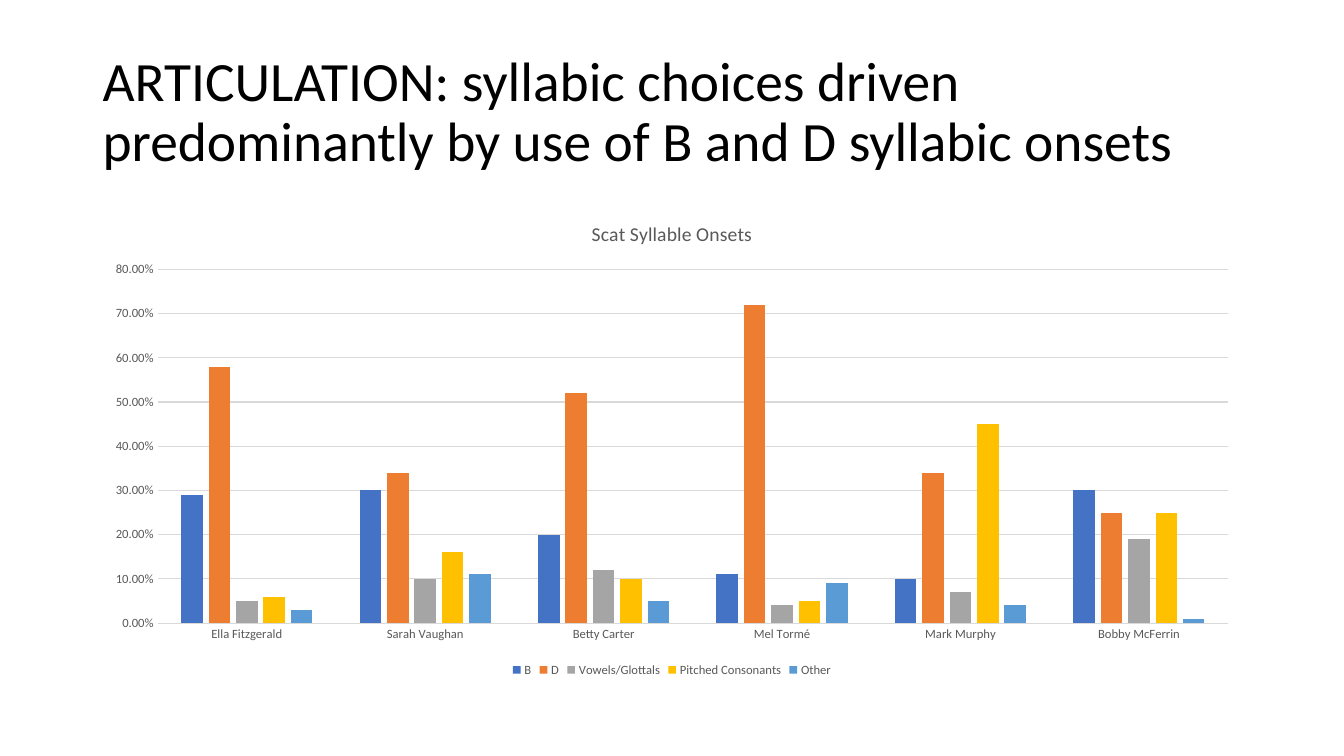
import pptx
import pptx.chart.data
import pptx.dml.color
import pptx.enum.chart
import pptx.enum.text
import pptx.util

COLUMNS, ROWS = 29, 150

SINGERS = ["Ella Fitzgerald", "Sarah Vaughan", "Betty Carter",
           "Mel Tormé", "Mark Murphy", "Bobby McFerrin"]
ONSETS = [
    ("B", "4472C4", (0.29, 0.3, 0.2, 0.11, 0.1, 0.3)),
    ("D", "ED7D31", (0.58, 0.34, 0.52, 0.72, 0.34, 0.25)),
    ("Vowels/Glottals", "A5A5A5", (0.05, 0.1, 0.12, 0.04, 0.07, 0.19)),
    ("Pitched Consonants", "FFC000", (0.06, 0.16, 0.1, 0.05, 0.45, 0.25)),
    ("Other", "5B9BD5", (0.03, 0.11, 0.05, 0.09, 0.04, 0.01)),
]


def color(value):
    return pptx.dml.color.RGBColor.from_string(value)


class SlideBuilder:
    font_name = "Calibri"
    title_color = "000000"
    label_color = "595959"
    line_color = "D9D9D9"

    def __init__(self, presentation):
        self.slide = presentation.slides.add_slide(presentation.slide_layouts[6])
        self.column = presentation.slide_width / COLUMNS
        self.row = presentation.slide_height / ROWS

    def place(self, left, top, width, height):
        return (round(left * self.column), round(top * self.row),
                round(width * self.column), round(height * self.row))

    def style_font(self, font, size, value):
        font.name = self.font_name
        font.size = pptx.util.Pt(size)
        font.bold = False
        font.color.rgb = color(value)

    def style_line(self, line):
        line.color.rgb = color(self.line_color)
        line.width = pptx.util.Pt(0.75)

    def title(self, text, *cells):
        frame = self.slide.shapes.add_textbox(*self.place(*cells)).text_frame
        frame.word_wrap = True
        frame.vertical_anchor = pptx.enum.text.MSO_ANCHOR.MIDDLE
        paragraph = frame.paragraphs[0]
        paragraph.text = text
        paragraph.line_spacing = 0.9
        self.style_font(paragraph.font, 39.6, self.title_color)

    def column_chart(self, heading, categories, series_rows, *cells):
        data = pptx.chart.data.CategoryChartData(number_format="0%")
        data.categories = categories
        for name, fill, values in series_rows:
            data.add_series(name, values)
        chart = self.slide.shapes.add_chart(
            pptx.enum.chart.XL_CHART_TYPE.COLUMN_CLUSTERED,
            *self.place(*cells), data).chart
        self.style_font(chart.font, 10, self.title_color)

        chart.has_title = True
        paragraph = chart.chart_title.text_frame.paragraphs[0]
        paragraph.text = heading
        self.style_font(paragraph.font, 14, self.label_color)
        chart.chart_title.include_in_layout = False

        chart.has_legend = True
        chart.legend.position = pptx.enum.chart.XL_LEGEND_POSITION.BOTTOM
        chart.legend.include_in_layout = False
        self.style_font(chart.legend.font, 9, self.label_color)

        plot = chart.plots[0]
        plot.gap_width = 219
        plot.overlap = -27
        plot.vary_by_categories = False
        for series, (name, fill, values) in zip(plot.series, series_rows):
            series.format.fill.solid()
            series.format.fill.fore_color.rgb = color(fill)
            series.invert_if_negative = False

        for axis in (chart.category_axis, chart.value_axis):
            axis.major_tick_mark = pptx.enum.chart.XL_TICK_MARK.NONE
            axis.minor_tick_mark = pptx.enum.chart.XL_TICK_MARK.NONE
            self.style_font(axis.tick_labels.font, 9, self.label_color)
        self.style_line(chart.category_axis.format.line)

        values_axis = chart.value_axis
        values_axis.minimum_scale = 0
        values_axis.maximum_scale = 0.8
        values_axis.major_unit = 0.1
        values_axis.format.line.fill.background()
        values_axis.has_major_gridlines = True
        self.style_line(values_axis.major_gridlines.format.line)
        values_axis.tick_labels.number_format = "0.00%"
        values_axis.tick_labels.number_format_is_linked = False


def main():
    presentation = pptx.Presentation()
    presentation.slide_width = pptx.util.Inches(13.33)
    presentation.slide_height = pptx.util.Inches(7.5)
    builder = SlideBuilder(presentation)
    builder.title("ARTICULATION: syllabic choices driven predominantly "
                  "by use of B and D syllabic onsets", 2, 8, 25, 29)
    builder.column_chart("Scat Syllable Onsets", SINGERS, ONSETS, 2, 40, 25, 95.2)
    presentation.save("out.pptx")


if __name__ == "__main__":
    main()
